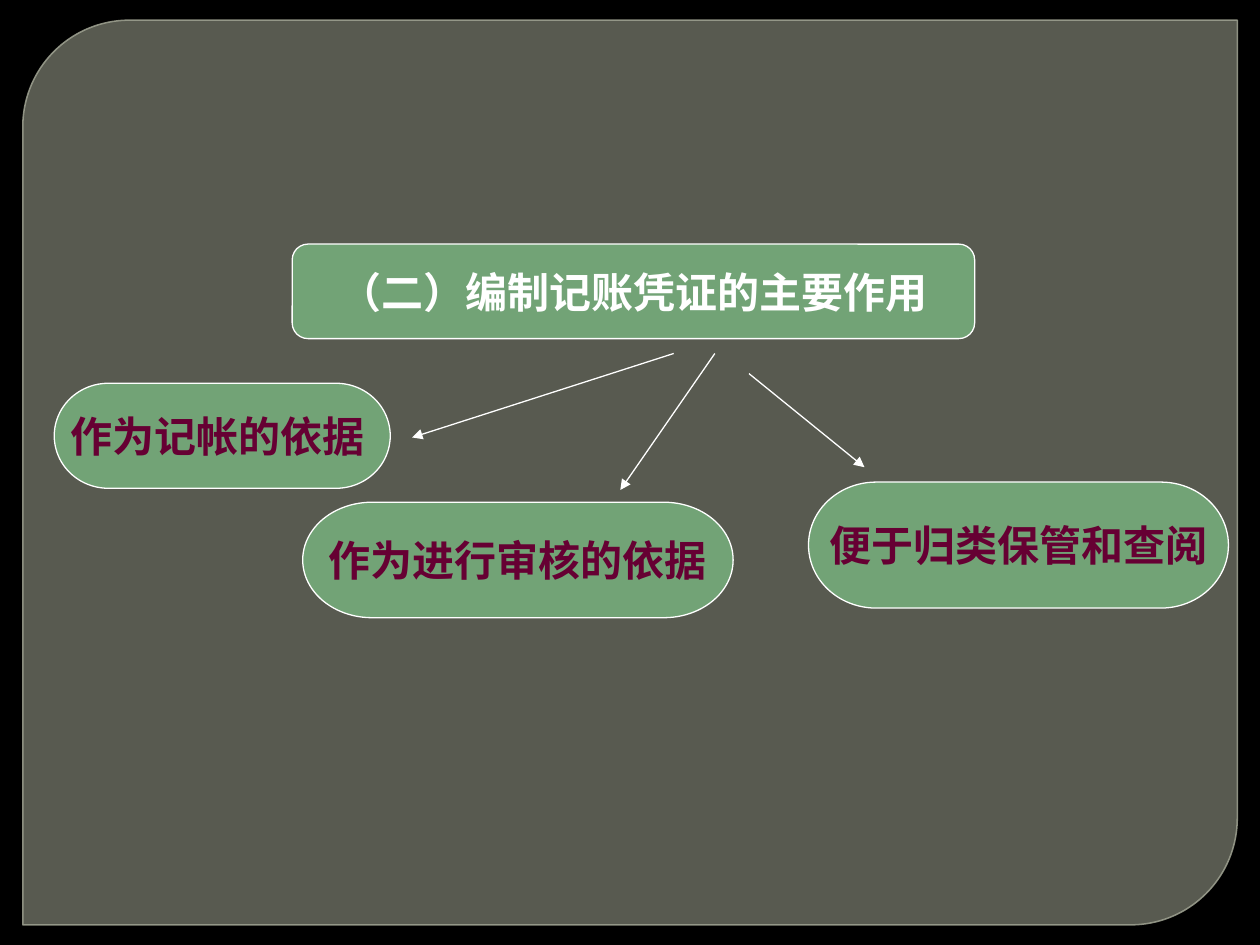
from lxml import etree
from pptx import Presentation
from pptx.dml.color import RGBColor
from pptx.enum.shapes import MSO_CONNECTOR, MSO_SHAPE
from pptx.enum.text import MSO_ANCHOR, PP_ALIGN
from pptx.oxml.ns import qn
from pptx.util import Pt

STRAIGHT = MSO_CONNECTOR.STRAIGHT
FRAME = MSO_SHAPE.ROUND_2_DIAG_RECTANGLE
ROUNDED = MSO_SHAPE.ROUNDED_RECTANGLE
PILL = MSO_SHAPE.FLOWCHART_TERMINATOR
MIDDLE = MSO_ANCHOR.MIDDLE
CENTER = PP_ALIGN.CENTER

COLORS = {
    "page": "000000",
    "panel": "888B7B",
    "panel_edge": "9DA090",
    "box": "72A376",
    "line": "FFFFFF",
    "title": "FFFFFF",
    "purpose": "660033",
}
CJK_FONT = "Noto Sans CJK SC"
TITLE_FONT = "Times New Roman"

TITLE = ("（二）编制记账凭证的主要作用", (167, 139.5, 390, 54))
PURPOSES = [
    ("作为记帐的依据 ", (31, 219, 192, 60)),
    ("作为进行审核的依据", (173, 287, 246, 66)),
    ("便于归类保管和查阅", (462, 275.5, 240, 72)),
]
ARROWS = [
    ((385, 202), (235.5, 250)),
    ((408.5, 202), (354.5, 280)),
    ((428, 213.5), (494, 267)),
]


def color(name):
    """Return the named colour."""
    return RGBColor.from_string(COLORS[name])


def set_alpha(fill, percent):
    """Give a solid fill the stated opacity."""
    tint = fill._xPr.find(qn("a:solidFill"))[0]
    etree.SubElement(tint, qn("a:alpha"), val=str(percent * 1000))


def add_box(page, kind, bounds, fill, line, width):
    """Add a filled and outlined shape without a shadow."""
    box = page.shapes.add_shape(kind, *map(Pt, bounds))
    box.shadow.inherit = False
    box.fill.solid()
    box.fill.fore_color.rgb = color(fill)
    box.line.color.rgb = color(line)
    box.line.width = Pt(width)
    return box


def add_panel(page, bounds):
    """Draw the translucent panel behind the diagram."""
    panel = add_box(page, FRAME, bounds, "panel", "panel_edge", 0.87)
    panel.adjustments[0] = 0.118
    panel.adjustments[1] = 0
    set_alpha(panel.fill, 65)
    set_alpha(panel.line.fill, 88)


def add_label(page, kind, text, bounds, font_name, text_color):
    """Draw a green box with one centred bold line of text."""
    box = add_box(page, kind, bounds, "box", "line", 0.75)
    frame = box.text_frame
    frame.word_wrap = False
    frame.vertical_anchor = MIDDLE
    para = frame.paragraphs[0]
    para.text = text
    para.alignment = CENTER
    para.font.size = Pt(24)
    para.font.bold = True
    para.font.color.rgb = color(text_color)
    para.font.name = font_name
    defaults = para._p.pPr.find(qn("a:defRPr"))
    etree.SubElement(defaults, qn("a:ea"), typeface=CJK_FONT)


def add_arrow(page, start, end):
    """Draw a thin line with a triangle at its end."""
    arrow = page.shapes.add_connector(STRAIGHT, *map(Pt, start + end))
    arrow.line.color.rgb = color("line")
    arrow.line.width = Pt(0.75)
    etree.SubElement(arrow.line._get_or_add_ln(), qn("a:tailEnd"), type="triangle")
    etree.SubElement(arrow._element.spPr, qn("a:effectLst"))


def add_diagram(page, left, top):
    """Draw the title, its three purposes and the arrows from a given corner."""
    def shift(values):
        """Move a point or a box by the corner of the diagram."""
        return (left + values[0], top + values[1]) + values[2:]

    text, bounds = TITLE
    add_label(page, ROUNDED, text, shift(bounds), TITLE_FONT, "title")
    for text, bounds in PURPOSES:
        add_label(page, PILL, text, shift(bounds), CJK_FONT, "purpose")
    for start, end in ARROWS:
        add_arrow(page, shift(start), shift(end))


def main():
    """Build and save the slide."""
    deck = Presentation()
    deck.slide_width, deck.slide_height = Pt(720), Pt(540)
    page = deck.slides.add_slide(deck.slide_layouts[6])
    page.background.fill.solid()
    page.background.fill.fore_color.rgb = color("page")
    add_panel(page, (13, 11.5, 694, 517))
    add_diagram(page, 0, 0)
    deck.save("out.pptx")


if __name__ == "__main__":
    main()
